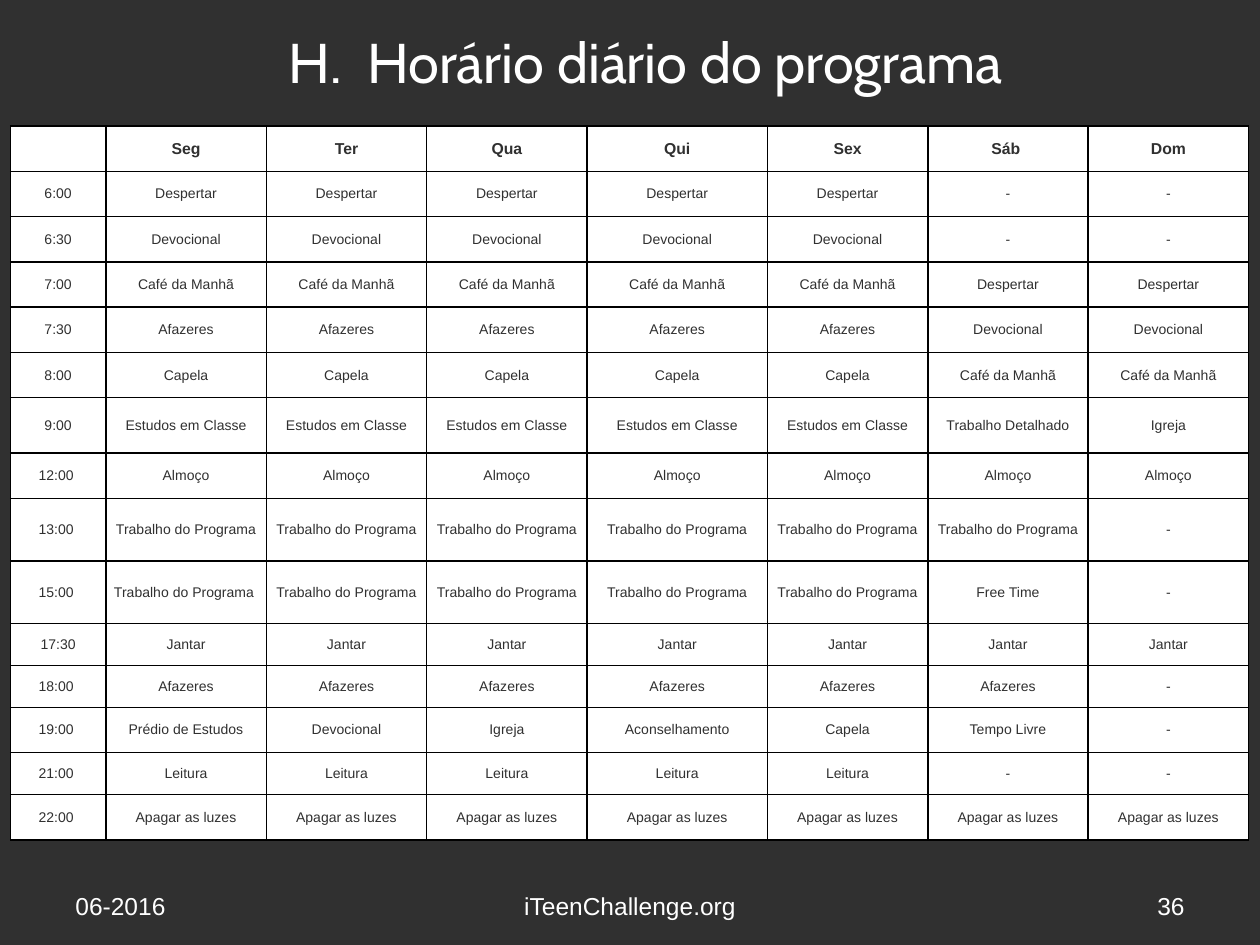
import pptx
import pptx.dml.color
import pptx.enum.text
import pptx.oxml
import pptx.oxml.ns
import pptx.util
from dataclasses import dataclass

Pt = pptx.util.Pt
Align = pptx.enum.text.PP_ALIGN
Anchor = pptx.enum.text.MSO_ANCHOR


@dataclass(frozen=True)
class Theme:
    """Colours, fonts and type sizes of the slide."""

    dark: str = "303030"
    light: str = "FFFFFF"
    border: str = "000000"
    title_font: str = "Cabin"
    body_font: str = "Arial"
    title_size: int = 32
    footer_size: int = 14
    header_size: int = 9
    cell_size: int = 8


class SlideBuilder:
    """Draws styled elements on the current slide."""

    def __init__(self, theme, page):
        self.theme = theme
        self.page = page

    def paint(self, fill, colour):
        fill.solid()
        fill.fore_color.rgb = pptx.dml.color.RGBColor.from_string(colour)

    def background(self):
        self.paint(self.page.background.fill, self.theme.dark)

    def span(self, para, text, size, colour, font, bold=False):
        span = para.add_run()
        span.text = text
        span.font.name = font
        span.font.size = Pt(size)
        span.font.bold = bold
        self.paint(span.font.fill, colour)
        return span

    def title(self, number, text, left, top, width, height):
        box = self.page.shapes.title
        box.left, box.top, box.width, box.height = map(Pt, (left, top, width, height))
        frame = box.text_frame
        frame.word_wrap = True
        frame.auto_size = pptx.enum.text.MSO_AUTO_SIZE.SHAPE_TO_FIT_TEXT
        frame.vertical_anchor = Anchor.TOP
        para = frame.paragraphs[0]
        para.alignment = Align.CENTER
        style = (self.theme.title_size, self.theme.light, self.theme.title_font)
        self.span(para, number, *style)
        gap = self.span(para, " ", *style)
        gap.font._element.set("spc", "750")
        self.span(para, text, *style)

    def footer(self, text, left, width, alignment):
        box = self.page.shapes.add_textbox(Pt(left), Pt(492), Pt(width), Pt(37.5))
        frame = box.text_frame
        frame.word_wrap = True
        frame.vertical_anchor = Anchor.BOTTOM
        para = frame.paragraphs[0]
        para.alignment = alignment
        self.span(para, text, self.theme.footer_size, self.theme.light, self.theme.body_font)

    def borders(self, cell):
        properties = cell._tc.get_or_add_tcPr()
        for side in ("lnL", "lnR", "lnT", "lnB"):
            properties.append(pptx.oxml.parse_xml(
                f'<a:{side} {pptx.oxml.ns.nsdecls("a")} w="{Pt(1)}"><a:solidFill>'
                f'<a:srgbClr val="{self.theme.border}"/></a:solidFill></a:{side}>'))

    def cell(self, cell, text, header):
        cell.margin_left = cell.margin_right = Pt(4.5)
        cell.margin_top = cell.margin_bottom = 0
        cell.vertical_anchor = Anchor.MIDDLE
        self.borders(cell)
        self.paint(cell.fill, self.theme.light)
        para = cell.text_frame.paragraphs[0]
        para.alignment = Align.CENTER
        if text:
            size = self.theme.header_size if header else self.theme.cell_size
            self.span(para, text, size, self.theme.dark, self.theme.body_font, header)

    def table(self, records, left, top, widths, heights):
        table = self.page.shapes.add_table(
            len(heights), len(widths), Pt(left), Pt(top),
            Pt(sum(widths)), Pt(sum(heights))).table
        table.first_row = table.horz_banding = False
        for column, width in zip(table.columns, widths):
            column.width = Pt(width)
        for row, height in zip(table.rows, heights):
            row.height = Pt(height)
        for row_index, record in enumerate(records):
            for column_index, text in enumerate(record):
                self.cell(table.cell(row_index, column_index), text, row_index == 0)


def weekly(time, weekday, saturday, sunday):
    return [time, *[weekday] * 5, saturday, sunday]


WORK = "Trabalho do Programa"
SCHEDULE = [
    ["", "Seg", "Ter", "Qua", "Qui", "Sex", "Sáb ", "Dom"],
    weekly("6:00", "Despertar", "-", "-"),
    weekly("6:30", "Devocional", "-", "-"),
    weekly("7:00", "Café da Manhã", "Despertar", "Despertar"),
    weekly("7:30", "Afazeres", "Devocional", "Devocional"),
    weekly("8:00", "Capela", "Café da Manhã", "Café da Manhã"),
    weekly("9:00", "Estudos em Classe", "Trabalho Detalhado", "Igreja"),
    weekly("12:00 ", "Almoço", "Almoço", "Almoço"),
    weekly("13:00 ", WORK, WORK, "-"),
    ["15:00 ", WORK + " ", *[WORK] * 4, "Free Time", "-"],
    weekly("17:30", "Jantar", "Jantar", "Jantar"),
    weekly("18:00 ", "Afazeres", "Afazeres", "-"),
    ["19:00 ", "Prédio de Estudos", "Devocional", "Igreja", "Aconselhamento",
     "Capela", "Tempo Livre", "-"],
    weekly("21:00 ", "Leitura", "-", "-"),
    weekly("22:00 ", "Apagar as luzes", "Apagar as luzes", "Apagar as luzes"),
]
COLUMN_WIDTHS = [54.5, *[91.7] * 3, 103, *[91.7] * 3]
ROW_HEIGHTS = [*[25.9] * 6, 31.7, 25.9, 35.7, 35.7, 24, 24, 25.9, 24, 25.9]


def main():
    deck = pptx.Presentation()
    deck.slide_width, deck.slide_height = Pt(720), Pt(540)
    builder = SlideBuilder(Theme(), deck.slides.add_slide(deck.slide_layouts[5]))
    builder.background()
    builder.footer("06-2016", 36, 168, Align.LEFT)
    builder.footer("iTeenChallenge.org", 246, 228, Align.CENTER)
    builder.footer("36", 516, 168, Align.RIGHT)
    builder.title("H.", "Horário diário do programa", 36, 12, 666, 46)
    builder.table(SCHEDULE, 6, 72, COLUMN_WIDTHS, ROW_HEIGHTS)
    deck.save("out.pptx")


if __name__ == "__main__":
    main()
